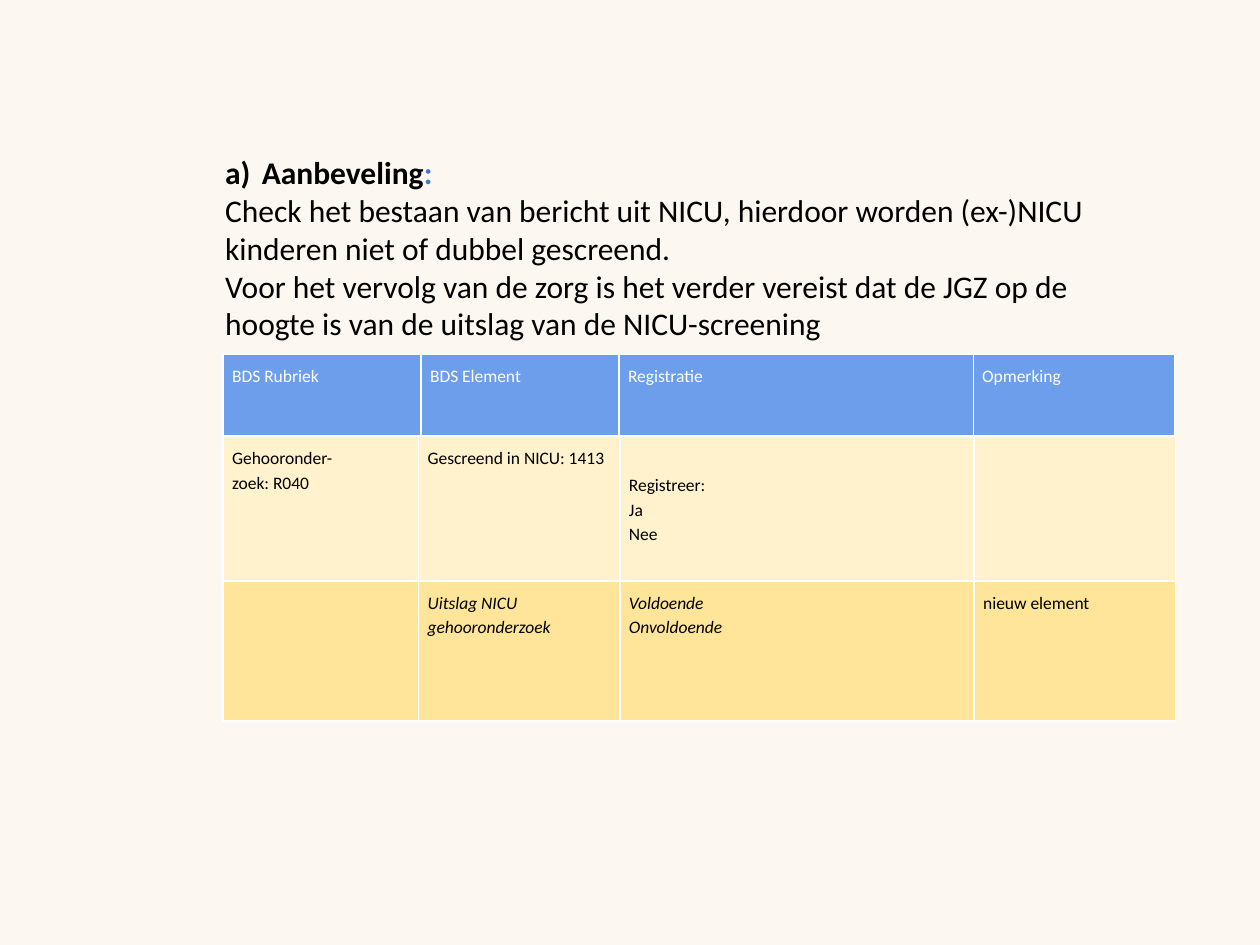
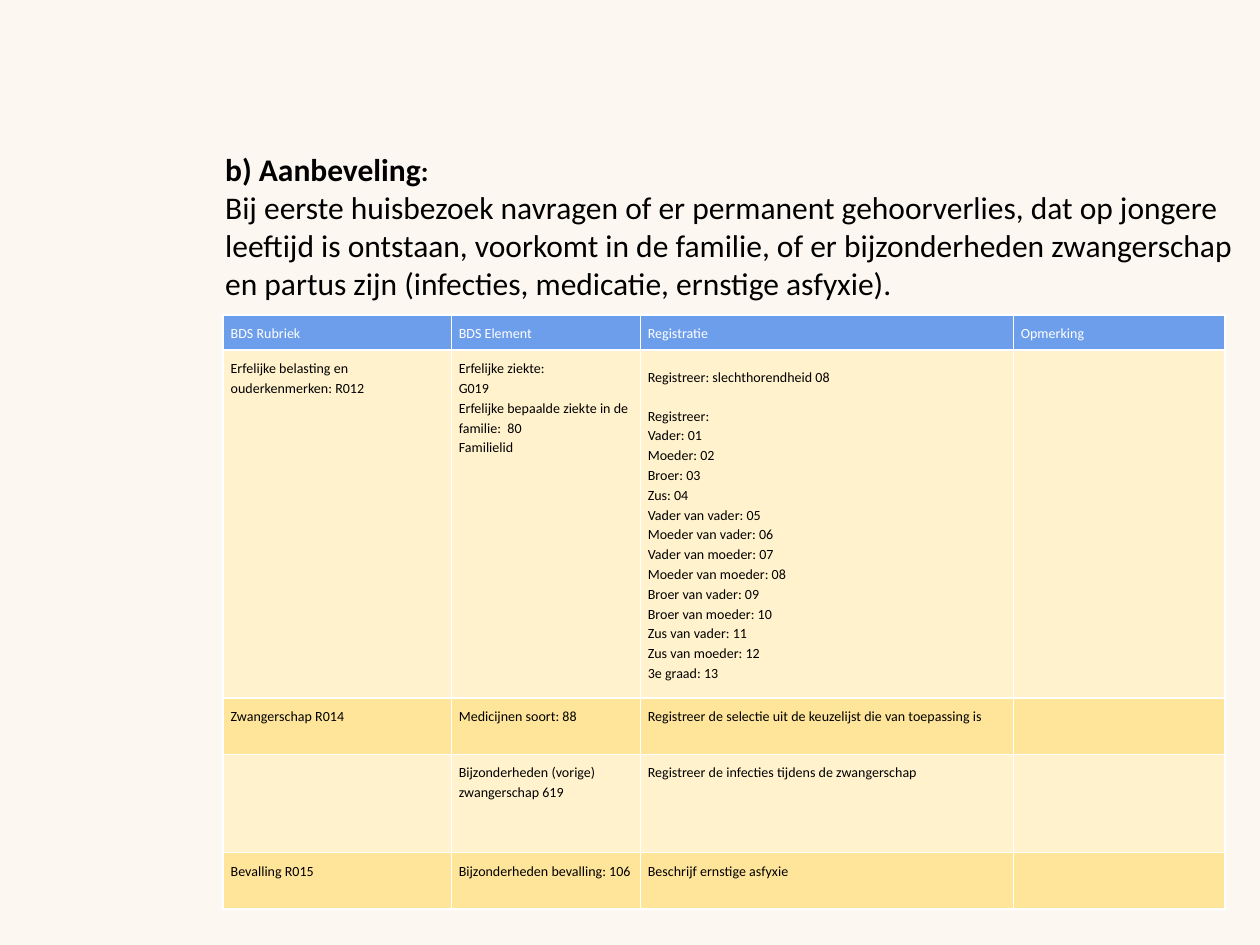
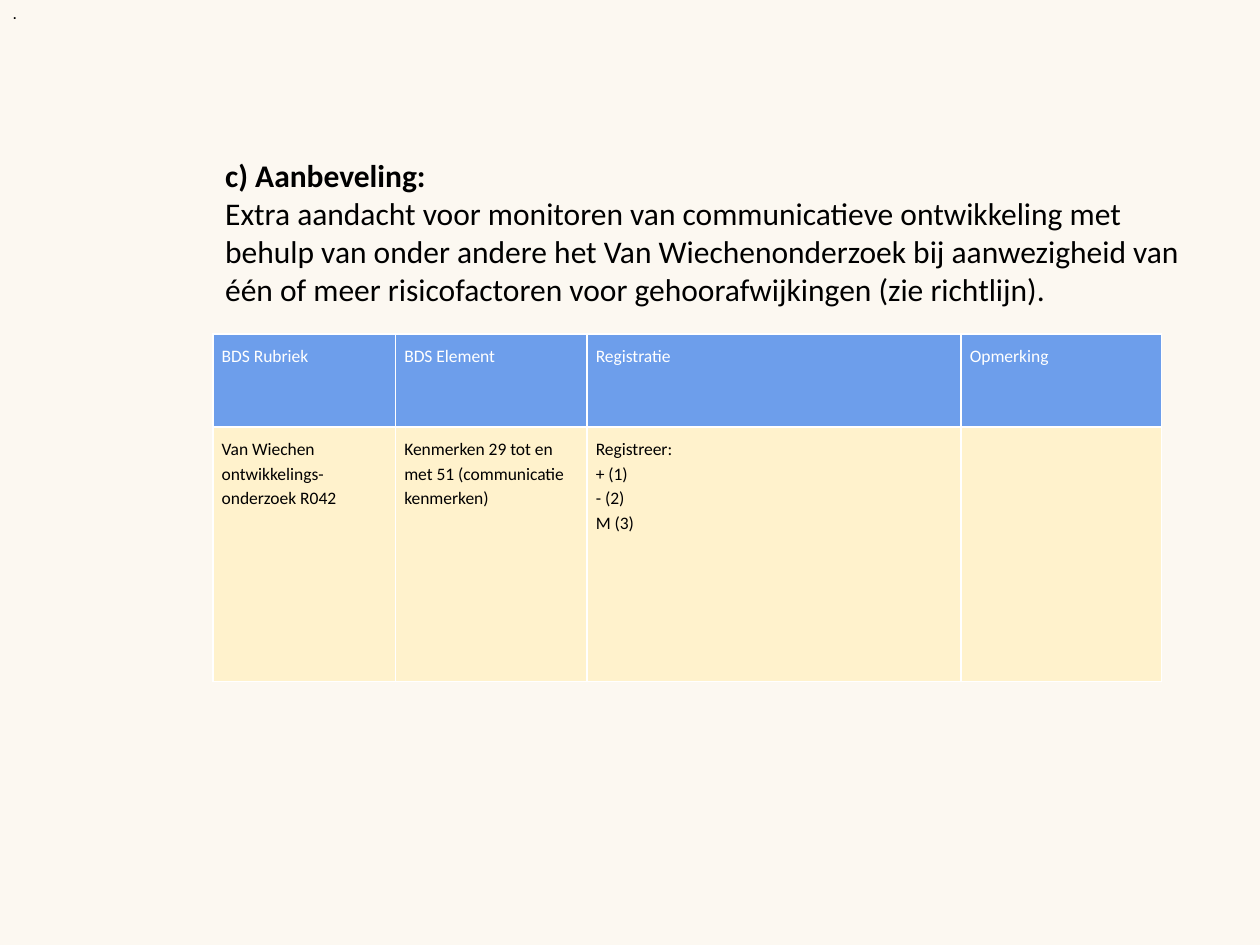
from lxml import etree
from pptx import Presentation
from pptx import util as u
from pptx.dml.color import RGBColor
from pptx.enum import text
from pptx.oxml import ns

COLORS = {
    "background": "FCF8F1",
    "header": "6D9EEB",
    "band_light": "FFF2CC",
    "band_dark": "FFE599",
    "white": "FFFFFF",
    "black": "000000",
    "accent": "3C78D8",
}
FONT = "Calibri"
HEADERS = ["BDS Rubriek", "BDS Element", "Registratie", "Opmerking"]
FAMILY = [
    "Vader: 01", "Moeder: 02", "Broer: 03", "Zus: 04",
    "Vader van vader: 05", "Moeder van vader: 06",
    "Vader van moeder: 07", "Moeder van moeder: 08",
    "Broer van vader: 09", "Broer van moeder: 10",
    "Zus van vader: 11", "Zus van moeder: 12", "3e graad: 13",
]


def rgb(name):
    """Return the named palette colour."""
    return RGBColor.from_string(COLORS[name])


def style_run(run, size, color="black", bold=False, italic=False, font=FONT):
    """Set the font of one run."""
    run.font.name = font
    run.font.size = u.Pt(size)
    run.font.bold = bold
    run.font.italic = italic
    run.font.color.rgb = rgb(color)


def add_slide(presentation):
    """Add a blank slide with the shared background."""
    slide = presentation.slides.add_slide(presentation.slide_layouts[6])
    slide.background.fill.solid()
    slide.background.fill.fore_color.rgb = rgb("background")
    return slide


def add_text_box(slide, left, top, width, height, margin_top):
    """Add an empty text box and return its text frame."""
    shape = slide.shapes.add_textbox(u.Cm(left), u.Cm(top), u.Cm(width), u.Cm(height))
    shape.text_frame.margin_top = u.Cm(margin_top)
    return shape.text_frame


def number_paragraph(paragraph, indent):
    """Number a paragraph as a), b), c) with a hanging indent."""
    properties = paragraph._p.get_or_add_pPr()
    properties.set("marL", str(u.Cm(indent)))
    properties.set("indent", str(-u.Cm(indent)))
    etree.SubElement(properties, ns.qn("a:buFont"), typeface=FONT)
    etree.SubElement(properties, ns.qn("a:buAutoNum"), type="alphaLcParenR")


def add_recommendation(slide, heading, body, width, height, top=2.9, margin_top=0.13,
                       colon_color="black", colon_size=18, numbered=False):
    """Add a bold heading with a colon, followed by body paragraphs."""
    frame = add_text_box(slide, 4.29, top, width, height, margin_top)
    frame.word_wrap = True
    paragraph = frame.paragraphs[0]
    if numbered:
        number_paragraph(paragraph, 0.74)
    for words, size, color in [(heading, 18, "black"), (":", colon_size, colon_color)]:
        run = paragraph.add_run()
        run.text = words
        style_run(run, size, color, bold=True)
    for line in body:
        paragraph = frame.add_paragraph()
        paragraph.text = line
        style_run(paragraph.runs[0], 18)


def add_borders(cell):
    """Draw a white line on each side of a cell."""
    properties = cell._tc.get_or_add_tcPr()
    for side in ("lnL", "lnR", "lnT", "lnB"):
        line = etree.SubElement(properties, ns.qn(f"a:{side}"), w=str(u.Pt(1)))
        fill = etree.SubElement(line, ns.qn("a:solidFill"))
        etree.SubElement(fill, ns.qn("a:srgbClr"), val=COLORS["white"])


def fill_cell(cell, words, fill, color, size, margin, italic):
    """Write one cell and set its fill, borders and margins."""
    add_borders(cell)
    cell.fill.solid()
    cell.fill.fore_color.rgb = rgb(fill)
    cell.margin_left = cell.margin_right = u.Cm(margin)
    cell.margin_top = cell.margin_bottom = u.Cm(margin)
    cell.text_frame.text = words
    for paragraph in cell.text_frame.paragraphs:
        paragraph.line_spacing = 1.15
        for run in paragraph.runs:
            style_run(run, size, color, italic=italic)


def add_grid(slide, left, top, widths, heights, rows, size=10, margin=0.18,
             has_header=True, italic=()):
    """Add a table with an optional header row and alternating bands."""
    frame = slide.shapes.add_table(len(rows), len(widths), u.Cm(left), u.Cm(top),
                                   u.Cm(sum(widths)), u.Cm(sum(heights)))
    table = frame.table
    table.first_row = has_header
    table.horz_banding = False
    for column, width in zip(table.columns, widths):
        column.width = u.Cm(width)
    for row, height in zip(table.rows, heights):
        row.height = u.Cm(height)
    for row_index, row in enumerate(rows):
        is_header = has_header and row_index == 0
        band = ("band_light", "band_dark")[(row_index - has_header) % 2]
        for column_index, words in enumerate(row):
            fill_cell(table.cell(row_index, column_index), words,
                      "header" if is_header else band,
                      "white" if is_header else "black",
                      size, margin, (row_index, column_index) in italic)
    return table


def build_nicu(presentation):
    """Build the slide on the NICU report."""
    slide = add_slide(presentation)
    add_grid(slide, 4.5, 7.14, [3.99, 3.99, 7.14, 4.06], [1.73], [HEADERS])
    rows = [
        ["Gehooronder-\nzoek: R040", "Gescreend in NICU: 1413", "Registreer:\nJa\nNee", ""],
        ["", "Uitslag NICU gehooronderzoek", "Voldoende\nOnvoldoende", "nieuw element"],
    ]
    table = add_grid(slide, 4.5, 8.79, [3.94, 4.06, 7.14, 4.06], [2.92, 2.82], rows,
                     has_header=False, italic={(1, 1), (1, 2)})
    table.cell(0, 2).vertical_anchor = text.MSO_ANCHOR.MIDDLE
    body = [
        "Check het bestaan van bericht uit NICU, hierdoor worden (ex-)NICU kinderen "
        "niet of dubbel gescreend.",
        "Voor het vervolg van de zorg is het verder vereist dat de JGZ op de hoogte is "
        "van de uitslag van de NICU-screening",
    ]
    add_recommendation(slide, "Aanbeveling", body, 18.59, 4.8, top=2.96,
                       colon_color="accent", numbered=True)


def build_home_visit(presentation):
    """Build the slide on the first home visit."""
    slide = add_slide(presentation)
    registration = ["Registreer: slechthorendheid 08", "Registreer:"] + FAMILY
    rows = [
        HEADERS,
        ["Erfelijke belasting en ouderkenmerken: R012",
         "Erfelijke ziekte:\nG019\nErfelijke bepaalde ziekte in de familie:  80\nFamilielid",
         "\n".join(registration), ""],
        ["Zwangerschap R014", "Medicijnen soort: 88",
         "Registreer de selectie uit de keuzelijst die van toepassing is", ""],
        ["", "Bijzonderheden (vorige) zwangerschap 619",
         "Registreer de infecties tijdens de zwangerschap", ""],
        ["Bevalling R015", "Bijzonderheden bevalling: 106",
         "Beschrijf ernstige asfyxie", ""],
    ]
    table = add_grid(slide, 4.5, 6.35, [4.6, 3.81, 7.52, 4.27],
                     [0.71, 7.01, 1.14, 1.98, 1.14], rows, size=8, margin=0.15)
    cell = table.cell(1, 2)
    cell.vertical_anchor = text.MSO_ANCHOR.MIDDLE
    cell.text_frame.paragraphs[1].space_before = u.Pt(11)
    body = [
        "Bij eerste huisbezoek navragen of er permanent gehoorverlies, dat op jongere "
        "leeftijd is ontstaan, voorkomt in de familie, of er bijzonderheden zwangerschap "
        "en partus zijn (infecties, medicatie, ernstige asfyxie).",
    ]
    add_recommendation(slide, "b) Aanbeveling", body, 21.01, 4.01, colon_size=16)


def build_monitoring(presentation):
    """Build the slide on monitoring communicative development."""
    slide = add_slide(presentation)
    body = [
        "Extra aandacht voor monitoren van communicatieve ontwikkeling met behulp van "
        "onder andere het Van Wiechenonderzoek bij aanwezigheid van één of meer "
        "risicofactoren voor gehoorafwijkingen (zie richtlijn).",
    ]
    add_recommendation(slide, "c) Aanbeveling", body, 19.84, 3.61, margin_top=0.25)
    rows = [
        HEADERS,
        ["Van Wiechen ontwikkelings-\nonderzoek R042",
         "Kenmerken 29 tot en met 51 (communicatie kenmerken)",
         "Registreer:\n+ (1)\n- (2)\nM (3)", ""],
    ]
    add_grid(slide, 4.29, 6.73, [3.68, 3.86, 7.54, 4.04], [1.88, 5.13], rows)
    frame = add_text_box(slide, 0, 0, 0.61, 1.35, 0.05)
    frame.word_wrap = False
    frame.text = "."
    style_run(frame.paragraphs[0].runs[0], 10, font="Arial")


def main():
    """Build and save the presentation."""
    presentation = Presentation()
    presentation.slide_width = u.Cm(25.4)
    presentation.slide_height = u.Cm(19.05)
    build_nicu(presentation)
    build_home_visit(presentation)
    build_monitoring(presentation)
    presentation.save("out.pptx")


if __name__ == "__main__":
    main()
